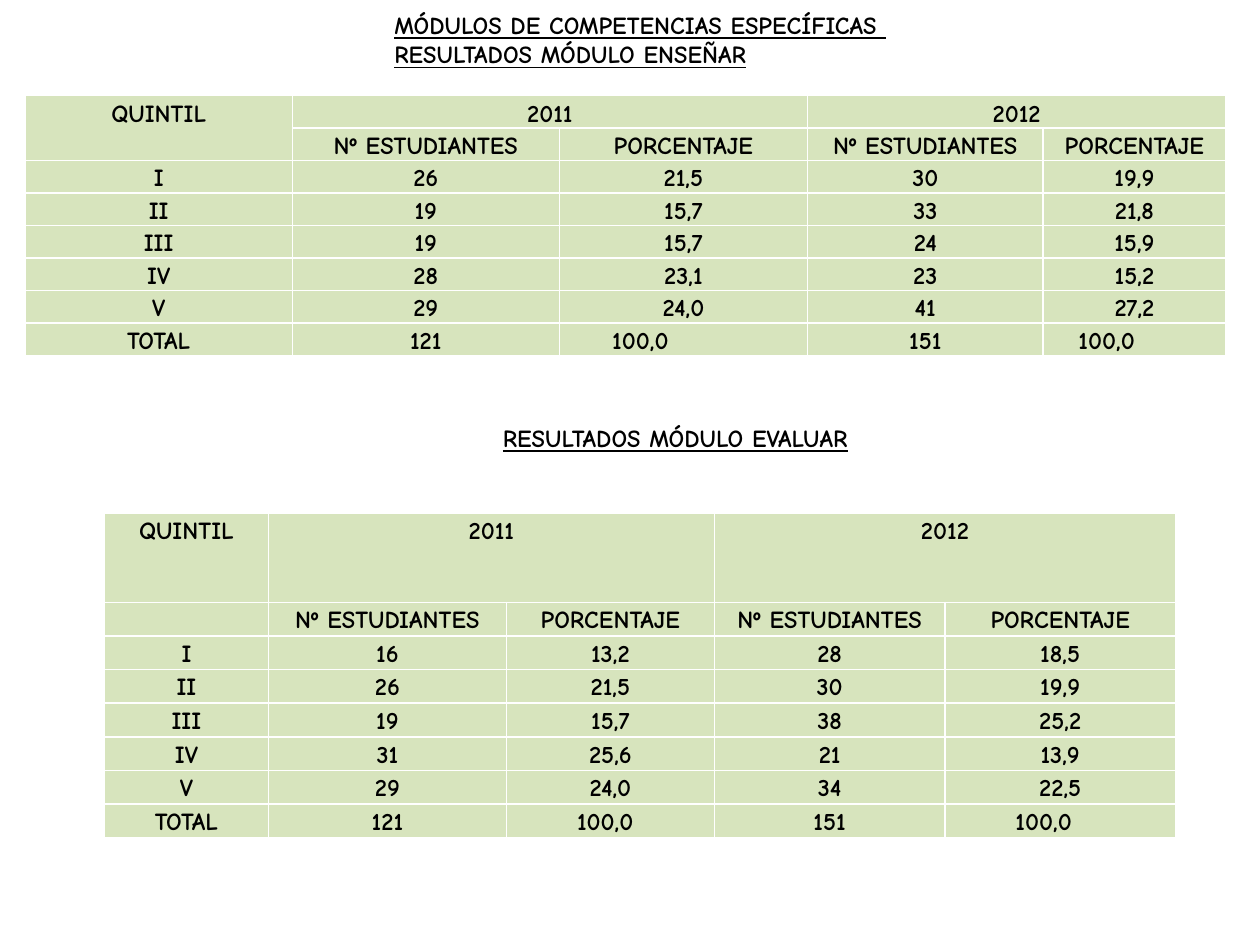
from pptx import Presentation
from pptx.dml.color import RGBColor
from pptx.enum.text import MSO_ANCHOR, MSO_AUTO_SIZE, PP_ALIGN
from pptx.util import Inches, Pt

HEADINGS = ["Nº ESTUDIANTES", "PORCENTAJE"] * 2
QUINTILES = ["I", "II", "III", "IV", "V", "TOTAL"]

TEACHING = [
    ["26", "21,5", "30", "19,9"],
    ["19", "15,7", "33", "21,8"],
    ["19", "15,7", "24", "15,9"],
    ["28", "23,1", "23", "15,2"],
    ["29", "24,0", "41", "27,2"],
    ["121", "100,0", "151", "100,0"],
]
ASSESSMENT = [
    ["16", "13,2", "28", "18,5"],
    ["26", "21,5", "30", "19,9"],
    ["19", "15,7", "38", "25,2"],
    ["31", "25,6", "21", "13,9"],
    ["29", "24,0", "34", "22,5"],
    ["121", "100,0", "151", "100,0"],
]


def color(value):
    return RGBColor.from_string(value)


class ResultsPage:
    """Style and current slide of the module results."""

    font_name = "Comic Neue"
    font_size = Pt(14)
    text_color = "000000"
    cell_color = "D7E4BD"
    cell_margin = 0.07

    def __init__(self, deck):
        self.page = deck.slides.add_slide(deck.slide_layouts[5])

    def style(self, para, align, underline=False):
        para.alignment = align
        font = para.font
        font.name = self.font_name
        font.size = self.font_size
        font.bold = True
        font.underline = underline
        font.color.rgb = color(self.text_color)

    def fill_heading(self, box, lines, align):
        frame = box.text_frame
        frame.word_wrap = True
        frame.auto_size = MSO_AUTO_SIZE.NONE
        frame.vertical_anchor = MSO_ANCHOR.TOP
        frame.text = "\n".join(lines)
        for para in frame.paragraphs:
            self.style(para, align, underline=True)

    def title(self, left, top, width, height, lines):
        box = self.page.shapes.title
        box.left, box.top = Inches(left), Inches(top)
        box.width, box.height = Inches(width), Inches(height)
        self.fill_heading(box, lines, PP_ALIGN.LEFT)

    def subtitle(self, left, top, width, height, line):
        box = self.page.shapes.add_textbox(
            Inches(left), Inches(top), Inches(width), Inches(height))
        self.fill_heading(box, [line], PP_ALIGN.CENTER)

    def cell(self, cell, text, indent=None):
        """Fill a cell; an indent makes its text left-aligned."""
        cell.fill.solid()
        cell.fill.fore_color.rgb = color(self.cell_color)
        cell.margin_left = Inches(self.cell_margin + (indent or 0))
        cell.margin_right = Inches(self.cell_margin)
        cell.margin_top = cell.margin_bottom = 0
        cell.text = text
        para = cell.text_frame.paragraphs[0]
        para.line_spacing = 1.15
        self.style(para, PP_ALIGN.CENTER if indent is None else PP_ALIGN.LEFT)

    def results_table(self, left, top, widths, heights, results,
                      total_indents, merge_quintile=False):
        rows = [["QUINTIL", "2011", "", "2012", ""], ["", *HEADINGS]]
        rows += [[name, *values] for name, values in zip(QUINTILES, results)]
        table = self.page.shapes.add_table(
            len(rows), len(widths), Inches(left), Inches(top),
            Inches(sum(widths)), Inches(sum(heights))).table
        for column, width in zip(table.columns, widths):
            column.width = Inches(width)
        for row, height in zip(table.rows, heights):
            row.height = Inches(height)
        for r, values in enumerate(rows):
            for c, text in enumerate(values):
                indent = total_indents.get(c) if r == len(rows) - 1 else None
                self.cell(table.cell(r, c), text, indent)
        for c in (1, 3):
            table.cell(0, c).merge(table.cell(0, c + 1))
        if merge_quintile:
            table.cell(0, 0).merge(table.cell(1, 0))


def main():
    deck = Presentation()
    deck.slide_width, deck.slide_height = Inches(10), Inches(7.5)
    results = ResultsPage(deck)
    results.title(3.03, 0.03, 4.65, 0.88,
                  ["MÓDULOS DE COMPETENCIAS ESPECÍFICAS ",
                   "RESULTADOS MÓDULO ENSEÑAR"])
    results.results_table(0.2, 0.76, [2.12, 2.12, 1.97, 1.87, 1.45],
                          [2.05 / 8] * 8, TEACHING, {2: 0.35, 4: 0.21},
                          merge_quintile=True)
    results.subtitle(2.76, 3.31, 5.2, 0.64, "RESULTADOS MÓDULO EVALUAR")
    results.results_table(0.83, 4.07, [1.3, 1.89, 1.65, 1.83, 1.83],
                          [0.71] + [1.87 / 7] * 7, ASSESSMENT,
                          {2: 0.49, 4: 0.49})
    deck.save("out.pptx")


if __name__ == "__main__":
    main()
